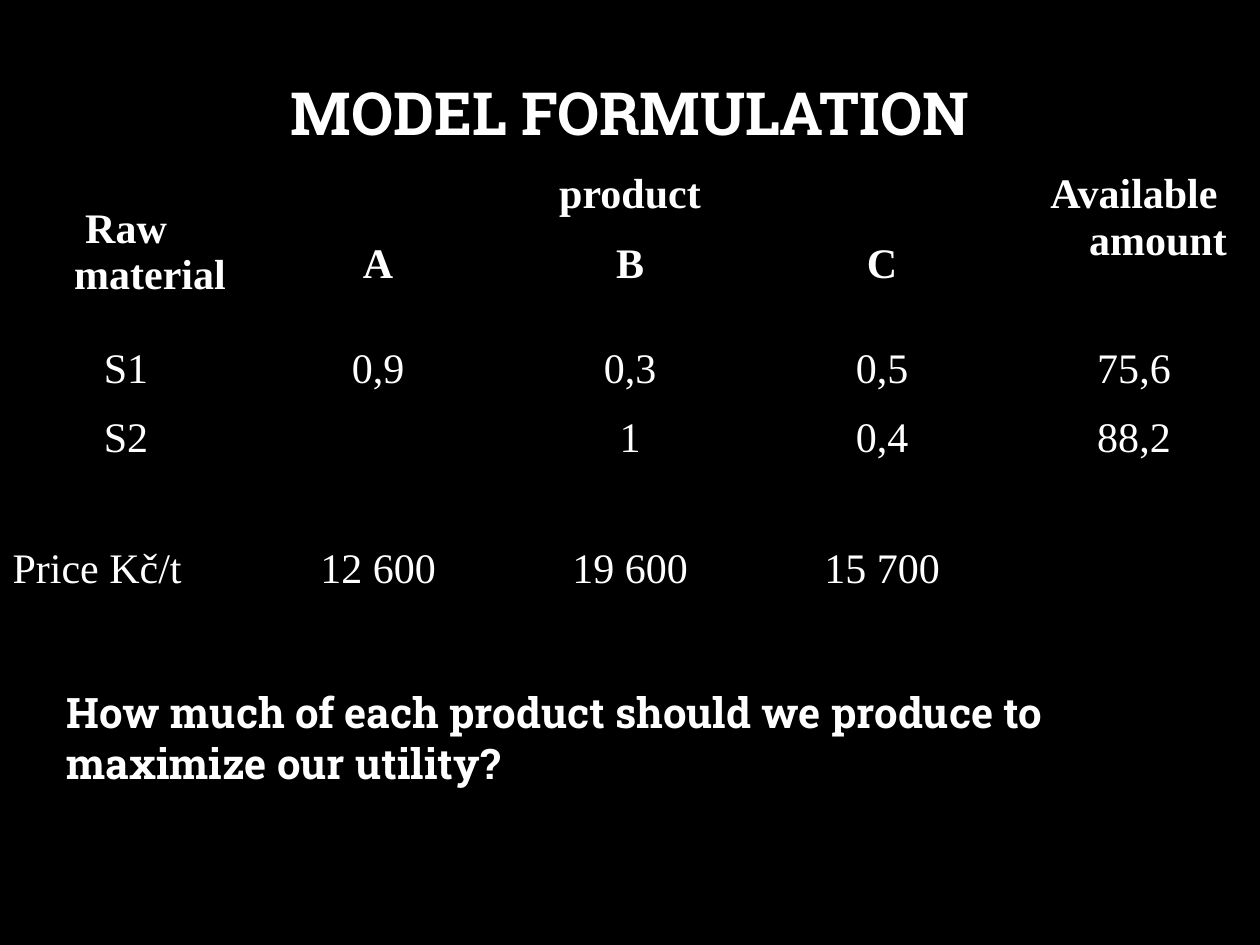
from pptx import Presentation
from pptx.dml.color import RGBColor
from pptx.enum.text import MSO_ANCHOR as Anchor, MSO_AUTO_SIZE as AutoSize, PP_ALIGN as Align
from pptx.oxml import parse_xml
from pptx.oxml.ns import nsdecls
from pptx.util import Emu, Inches, Pt

# Content
TITLE = "MODEL FORMULATION"
QUESTION = "How much of each product should we produce to maximize our utility?"
HEADER_ROWS = 2
MATERIALS = [
    ["Raw material", "product", "", "", "Available amount"],
    ["", "A", "B", "C", ""],
    ["S1", "0,9", "0,3", "0,5", "75,6"],
    ["S2", "", "1", "0,4", "88,2"],
    ["Price Kč/t", "12 600", "19 600", "15 700", ""],
]
MERGES = [((0, 0), (1, 0)), ((0, 1), (0, 3)), ((0, 4), (1, 4))]
ROW_HEIGHTS = [0.55, 0.55, 0.55, 1.04, 1.04]
COLORS = {"background": "000000", "border": "000000", "text": "FFFFFF"}
HEADING_FONT, TABLE_FONT = "Roboto Slab", "Times New Roman"
HANGING = Inches(0.38)


def write(frame, text, font=HEADING_FONT, size=24, bold=True, align=None,
          spacing=None, hanging=None):
    paragraph = frame.paragraphs[0]
    if align is not None:
        paragraph.alignment = align
    if spacing:
        paragraph.line_spacing = spacing
    if hanging:
        properties = paragraph._p.get_or_add_pPr()
        properties.set("marL", str(hanging))
        properties.set("indent", str(-hanging))
    run = paragraph.add_run()
    run.text = text
    run.font.name, run.font.size, run.font.bold = font, Pt(size), bold
    run.font.color.rgb = RGBColor.from_string(COLORS["text"])


def add_borders(cell):
    properties = cell._tc.get_or_add_tcPr()
    for position, side in enumerate(("lnL", "lnR", "lnT", "lnB")):
        properties.insert(position, parse_xml(
            f'<a:{side} {nsdecls("a")} w="{Pt(1)}"><a:solidFill>'
            f'<a:srgbClr val="{COLORS["border"]}"/></a:solidFill></a:{side}>'))


deck = Presentation()
deck.slide_width, deck.slide_height = Inches(10), Inches(7.5)
slide = deck.slides.add_slide(deck.slide_layouts[5])
slide.background.fill.solid()
slide.background.fill.fore_color.rgb = RGBColor.from_string(COLORS["background"])

# Title
title = slide.shapes.title
title.left, title.top = Inches(0.5), Inches(0.3)
title.width, title.height = Inches(9), Inches(1.25)
title.text_frame.vertical_anchor = Anchor.MIDDLE
write(title.text_frame, TITLE, size=34, align=Align.CENTER, spacing=0.9)

# Table of materials, products and prices
columns = len(MATERIALS[0])
materials = slide.shapes.add_table(
    len(MATERIALS), columns, 0, Inches(1.31),
    deck.slide_width, Inches(sum(ROW_HEIGHTS))).table
materials.first_row = materials.horz_banding = False
for column in materials.columns:
    column.width = Emu(deck.slide_width // columns)
for row, height in zip(materials.rows, ROW_HEIGHTS):
    row.height = Inches(height)
for first, last in MERGES:
    materials.cell(*first).merge(materials.cell(*last))

for r, values in enumerate(MATERIALS):
    for c, value in enumerate(values):
        cell = materials.cell(r, c)
        cell.fill.background()
        add_borders(cell)
        if value:
            is_price_label = r == len(MATERIALS) - 1 and c == 0
            write(cell.text_frame, value, font=TABLE_FONT, bold=r < HEADER_ROWS,
                  align=Align.LEFT if is_price_label else Align.CENTER,
                  hanging=HANGING)
materials.cell(0, 0).vertical_anchor = Anchor.MIDDLE

# Question
question = slide.shapes.add_textbox(
    Inches(0.43), Inches(5.4), Inches(9.37), Inches(0.91)).text_frame
question.word_wrap = True
question.auto_size = AutoSize.SHAPE_TO_FIT_TEXT
write(question, QUESTION)

deck.save("out.pptx")
